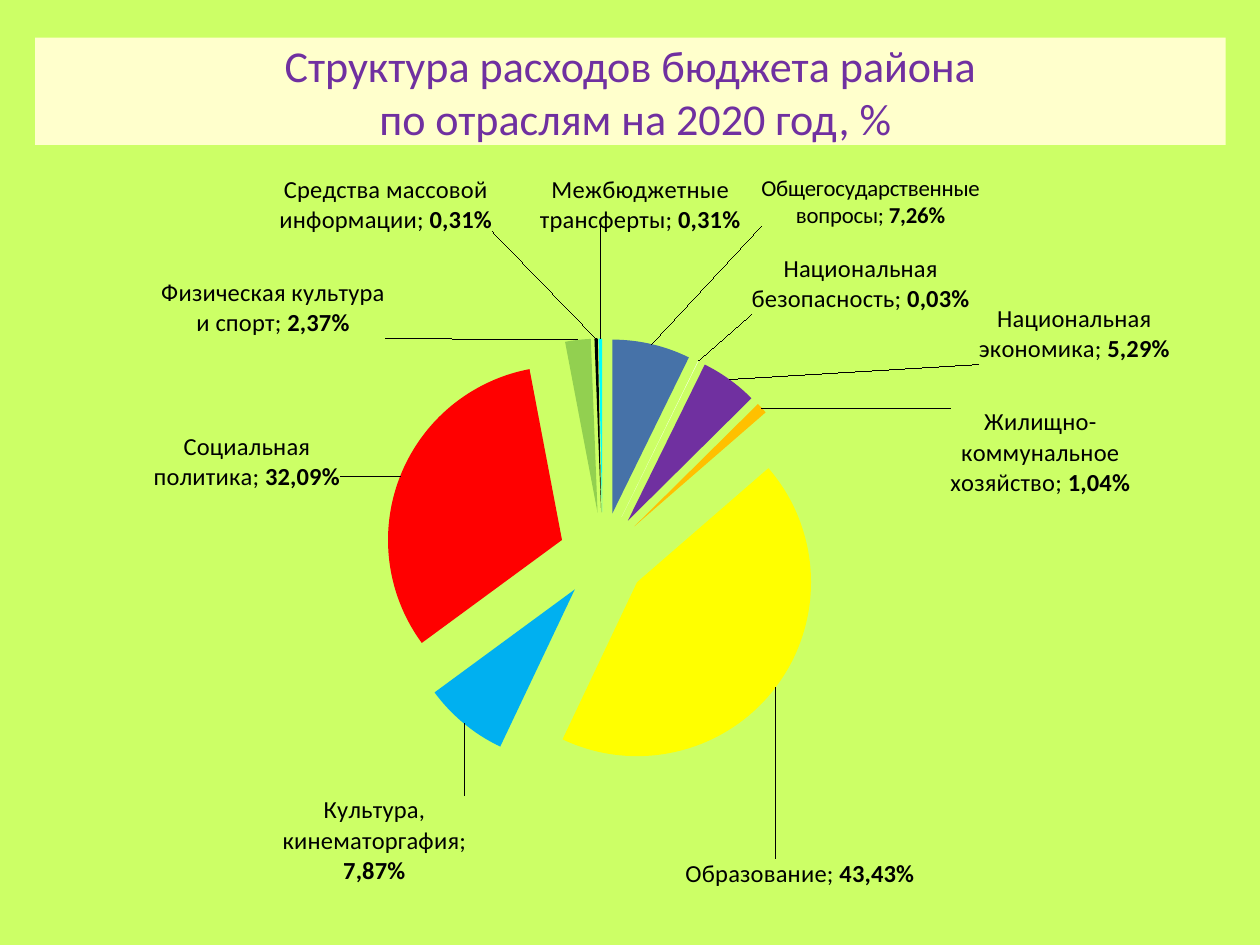
from dataclasses import dataclass

from lxml import etree
from pptx import Presentation
from pptx.chart.data import CategoryChartData
from pptx.dml.color import RGBColor
from pptx.enum.chart import XL_CHART_TYPE, XL_LABEL_POSITION
from pptx.enum.text import MSO_ANCHOR, PP_ALIGN
from pptx.oxml.ns import qn
from pptx.util import Cm, Pt

PIE = XL_CHART_TYPE.PIE
BEST_FIT = XL_LABEL_POSITION.BEST_FIT
CENTER = PP_ALIGN.CENTER
MIDDLE = MSO_ANCHOR.MIDDLE
FONT = "Calibri"
EXPLOSION = 25


@dataclass
class Slice:
    name: str
    share: float
    color: str
    dx: float
    dy: float
    size: int = 14


SLICES = [
    Slice("Общегосударственные вопросы", 7.26, "4672A8", 9.08, -15.2, 13),
    Slice("Национальная безопасность", 0.03, "FFFFFF", 4.2, -5.48),
    Slice("Национальная экономика", 5.29, "7030A0", 20.59, -1.23),
    Slice("Жилищно-коммунальное хозяйство", 1.04, "FFC000", 15.38, 13.01),
    Slice("Образование", 43.43, "FFFF00", -8.07, 22.88),
    Slice("Культура, кинематоргафия", 7.87, "00B0F0", 0.59, 9.04),
    Slice("Социальная политика", 32.09, "FF0000", -4.45, 2.6),
    Slice("Физическая культура и спорт", 2.37, "92D050", -16.13, 0.82),
    Slice("Средства массовой информации", 0.31, "000000", -17.65, -13.7),
    Slice("Межбюджетные трансферты", 0.31, "00FFFF", 3.36, -14.32),
]


def rgb(color: str) -> RGBColor:
    return RGBColor.from_string(color)


def fill(target, color: str) -> None:
    target.fill.solid()
    target.fill.fore_color.rgb = rgb(color)


def set_font(font, color: str, **values) -> None:
    for key, value in {"name": FONT, **values}.items():
        setattr(font, key, value)
    font.color.rgb = rgb(color)


def make_layout(**values):
    layout = etree.Element(qn("c:layout"))
    manual = etree.SubElement(layout, qn("c:manualLayout"))
    for tag, value in values.items():
        etree.SubElement(manual, qn(f"c:{tag}")).set("val", str(value))
    return layout


def add_title(slide, text: str) -> None:
    sp = slide.shapes.title
    box = dict(left=Cm(0.71), top=Cm(0.76), width=Cm(24), height=Cm(2.16))
    for key, value in box.items():
        setattr(sp, key, value)
    fill(sp, "FFFFCC")
    tf = sp.text_frame
    tf.vertical_anchor = MIDDLE
    p = tf.paragraphs[0]
    p.text = text
    p.alignment = CENTER
    for r in p.runs:
        set_font(r.font, "7030A0", size=Pt(25.2))


def format_slice(ser, i: int, item: Slice) -> None:
    point = ser.points[i]
    fill(point.format, item.color)
    label = point.data_label
    tf = label.text_frame
    tf.word_wrap = True
    p = tf.paragraphs[0]
    share = f"{item.share:.2f}%".replace(".", ",")
    for text, bold in ((f"{item.name}; ", False), (share, True)):
        r = p.add_run()
        r.text = text
        set_font(r.font, "000000", size=Pt(item.size), bold=bold)
    label.position = BEST_FIT
    idx = ser._element.xpath(f"c:dLbls/c:dLbl/c:idx[@val='{i}']")[0]
    idx.addnext(make_layout(x=round(item.dx / 100, 4), y=round(item.dy / 100, 4)))


def add_pie(slide, items: list[Slice]) -> None:
    data = CategoryChartData(number_format="0.00%")
    data.categories = [item.name for item in items]
    data.add_series("Series 1", [round(item.share / 100, 4) for item in items])
    frame = slide.shapes.add_chart(PIE, Cm(0.71), Cm(3.53), Cm(24), Cm(14.71), data)
    chart = frame.chart
    chart.has_title = False
    chart.has_legend = False
    set_font(chart.font, "000000", size=Pt(10))

    plot = chart.plots[0]
    plot.vary_by_categories = True
    ser = plot.series[0]
    labels = ser.data_labels
    formats = dict(show_value=True, show_category_name=True, number_format="0.00%",
                   number_format_is_linked=False, position=BEST_FIT)
    for key, value in formats.items():
        setattr(labels, key, value)
    set_font(labels.font, "000000", size=Pt(14))
    for i, item in enumerate(items):
        format_slice(ser, i, item)
    for anchor in ser._element.xpath("c:tx | c:dPt/c:idx"):
        explosion = etree.Element(qn("c:explosion"))
        explosion.set("val", str(EXPLOSION))
        anchor.addnext(explosion)

    area = chart._chartSpace.xpath("c:chart/c:plotArea")[0]
    for old in area.xpath("c:layout"):
        area.remove(old)
    area.insert(0, make_layout(layoutTarget="inner", xMode="edge", yMode="edge",
                               x=0.169, y=0.224, w=0.615, h=0.596))


def main() -> None:
    prs = Presentation()
    prs.slide_width, prs.slide_height = Cm(25.4), Cm(19.05)
    slide = prs.slides.add_slide(prs.slide_layouts[5])
    fill(slide.background, "CCFF66")
    add_title(slide, "Структура расходов бюджета района\v по отраслям на 2020 год, %")
    add_pie(slide, SLICES)
    prs.save("out.pptx")


if __name__ == "__main__":
    main()
